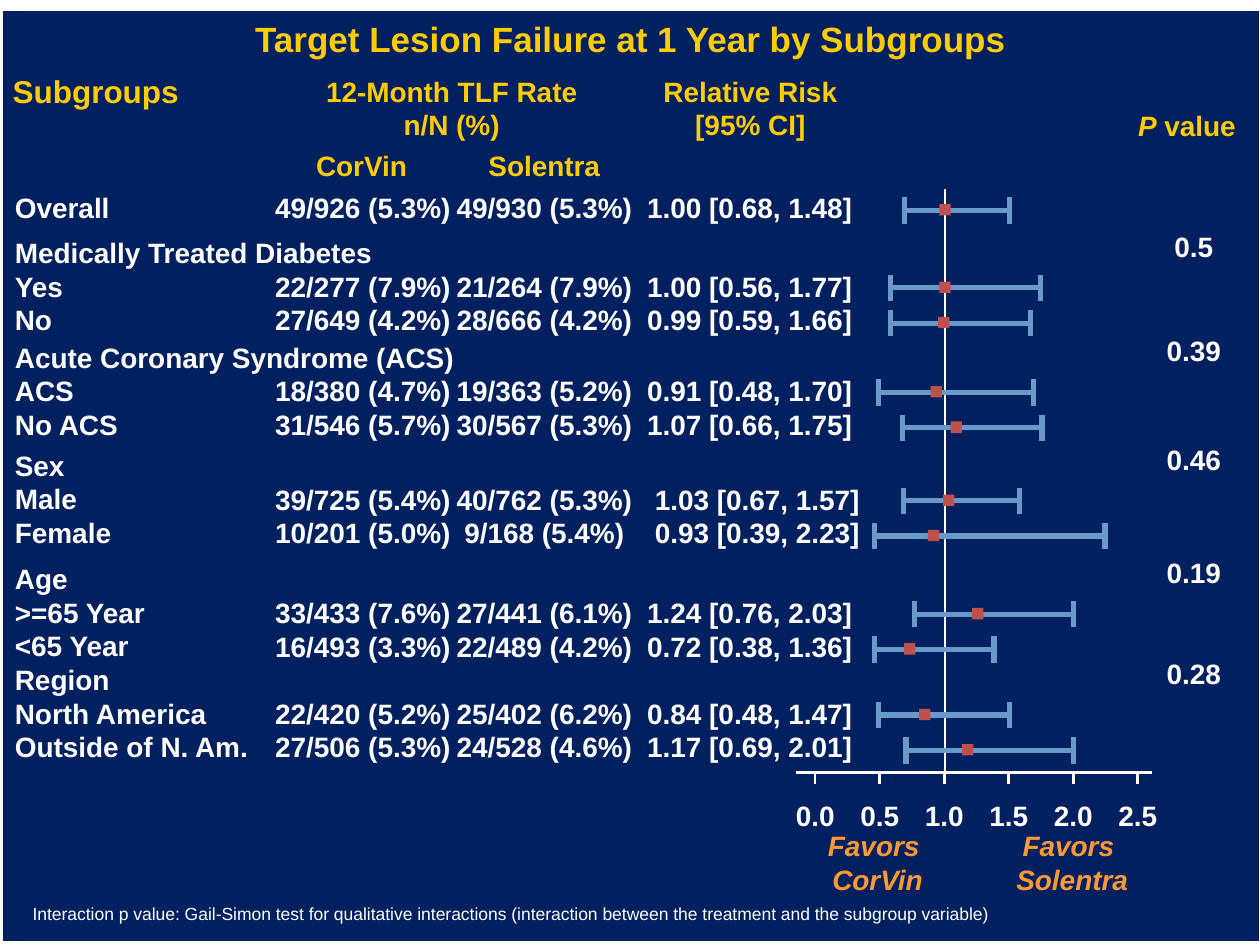
from dataclasses import dataclass

from lxml import etree
from pptx import Presentation
from pptx import util as u
from pptx.dml.color import RGBColor
from pptx.enum import shapes, text
from pptx.oxml import ns

COLUMNS, ROWS = 100, 75
ALIGN = {"left": text.PP_ALIGN.LEFT, "center": text.PP_ALIGN.CENTER}


@dataclass(frozen=True)
class Theme:
    """Colours, font and type sizes of the deck."""

    navy: str = "002060"
    white: str = "FFFFFF"
    gold: str = "FFCC00"
    orange: str = "FF9933"
    blue: str = "6999C8"
    red: str = "C0504D"
    font: str = "Arial"
    title: int = 20
    heading: int = 18
    body: int = 16
    note: int = 10


class ForestSlide:
    """Draws a forest plot slide on a grid of columns and rows."""

    def __init__(self, deck, theme):
        """Adds a blank page to the deck."""
        self.theme = theme
        self.column = deck.slide_width / COLUMNS
        self.row = deck.slide_height / ROWS
        self.page = deck.slides.add_slide(deck.slide_layouts[6])

    def place(self, left, top, width, height):
        """Turns grid units into slide lengths."""
        return [u.Emu(round(value * unit)) for value, unit in
                zip((left, top, width, height), (self.column, self.row) * 2)]

    def label(self, area, lines, color="white", align="center", wrap=False, **style):
        """Adds text; a line is a string or a list of (words, format) spans."""
        box = self.page.shapes.add_textbox(*self.place(*area))
        frame = box.text_frame
        frame.word_wrap = wrap
        frame.auto_size = text.MSO_AUTO_SIZE.SHAPE_TO_FIT_TEXT
        base = {"name": self.theme.font, "size": self.theme.body, "bold": True} | style
        for index, line in enumerate(lines):
            para = frame.add_paragraph() if index else frame.paragraphs[0]
            para.alignment = ALIGN[align]
            for words, extra in [(line, {})] if isinstance(line, str) else line:
                span = para.add_run()
                span.text = words
                values = base | extra
                values["size"] = u.Pt(values["size"])
                for name, value in values.items():
                    setattr(span.font, name, value)
                span.font.color.rgb = RGBColor.from_string(getattr(self.theme, color))

    def block(self, area, fill, line=None, target=None):
        """Adds a filled rectangle."""
        box = (target or self.page).shapes.add_shape(
            shapes.MSO_SHAPE.RECTANGLE, *self.place(*area))
        box.shadow.inherit = False
        box.fill.solid()
        box.fill.fore_color.rgb = RGBColor.from_string(getattr(self.theme, fill))
        if line:
            box.line.color.rgb = RGBColor.from_string(getattr(self.theme, line))
            box.line.width = u.Pt(0.75)
        else:
            box.line.fill.background()

    def rule(self, start, end, color="white", weight=1.5, target=None):
        """Adds a straight line between two grid points."""
        line = (target or self.page).shapes.add_connector(
            shapes.MSO_CONNECTOR.STRAIGHT, *self.place(*start, *end))
        line.line.color.rgb = RGBColor.from_string(getattr(self.theme, color))
        line.line.width = u.Pt(weight)
        etree.SubElement(line.element.spPr, ns.qn("a:effectLst"))

    def interval(self, y, low, middle, high):
        """Adds a confidence interval with end caps and a point estimate."""
        group = self.page.shapes.add_group_shape()
        pen = {"color": "blue", "weight": 3, "target": group}
        self.rule((low, y), (high, y), **pen)
        for x in (low, high):
            self.rule((x, y - 1.05), (x, y + 1.05), **pen)
        self.block((middle - 0.45, y - 0.5, 0.9, 0.9), "red", target=group)

    def axis(self, left, right, y, ticks, origin, step):
        """Adds the risk axis with its ticks and numbers."""
        self.rule((left, y), (right, y))
        for index, tick in enumerate(ticks):
            x = origin + index * step
            self.rule((x, y), (x, y + 0.9))
            self.label((x - 2.55, y + 1.6, 5.1, 3.7), [tick])

    def values(self, top, columns, shift=0):
        """Adds rates of both arms and the relative risk side by side."""
        places = ((20.8, 16), (35.2, 16), (50.3 + shift, 18.4))
        for (left, width), lines in zip(places, columns):
            self.label((left, top, width, 1 + 2.67 * len(lines)), lines)


DEVICES = ("CorVin", "Solentra")
OVERALL = [["49/926 (5.3%)"], ["49/930 (5.3%)"], ["1.00 [0.68, 1.48]"]]
SUBGROUPS = [
    (18.2, 30.6, ["Medically Treated Diabetes", "Yes", "No"], "0.5", 0,
     [["22/277 (7.9%)", "27/649 (4.2%)"], ["21/264 (7.9%)", "28/666 (4.2%)"],
      ["1.00 [0.56, 1.77]", "0.99 [0.59, 1.66]"]],
     [(70.7, 75, 82.6), (70.7, 74.9, 81.8)]),
    (26.5, 36.9, ["Acute Coronary Syndrome (ACS)", "ACS", "No ACS"], "0.39", 0,
     [["18/380 (4.7%)", "31/546 (5.7%)"], ["19/363 (5.2%)", "30/567 (5.3%)"],
      ["0.91 [0.48, 1.70]", "1.07 [0.66, 1.75]"]],
     [(69.7, 74.3, 82), (71.6, 75.9, 82.7)]),
    (35.1, 9.7, ["Sex", "Male", "Female"], "0.46", 0.6,
     [["39/725 (5.4%)", "10/201 (5.0%)"], ["40/762 (5.3%)", "9/168 (5.4%)"],
      ["1.03 [0.67, 1.57]", "0.93 [0.39, 2.23]"]],
     [(71.7, 75.3, 80.9), (69.4, 74.1, 87.7)]),
    (44.1, 12.5, ["Age", ">=65 Year", "<65 Year"], "0.19", 0,
     [["33/433 (7.6%)", "16/493 (3.3%)"], ["27/441 (6.1%)", "22/489 (4.2%)"],
      ["1.24 [0.76, 2.03]", "0.72 [0.38, 1.36]"]],
     [(72.6, 77.6, 85.2), (69.4, 72.2, 78.9)]),
    (52.1, 20.7, ["Region", "North America", "Outside of N. Am."], "0.28", 0,
     [["22/420 (5.2%)", "27/506 (5.3%)"], ["25/402 (6.2%)", "24/528 (4.6%)"],
      ["0.84 [0.48, 1.47]", "1.17 [0.69, 2.01]"]],
     [(69.7, 73.4, 80.1), (71.9, 76.8, 85.2)]),
]


def main():
    """Builds and saves the deck."""
    deck = Presentation()
    deck.slide_width, deck.slide_height = u.Inches(10), u.Inches(7.5)
    theme = Theme()
    slide = ForestSlide(deck, theme)
    slide.block((0.2, 0.8, 99.8, 73.9), "navy", line="white")

    slide.label((19.1, 0.9, 61.9, 4.3), ["Target Lesion Failure at 1 Year by Subgroups"],
                "gold", size=theme.title)
    slide.label((0, 5.2, 15.2, 4), ["Subgroups"], "gold", size=theme.heading)
    slide.label((23.1, 5.4, 25.5, 6.4), ["12-Month TLF Rate n/N (%)"], "gold", wrap=True)
    slide.label((51.6, 5.4, 15.9, 6.4), ["Relative Risk", "[95% CI]"], "gold")
    slide.label((89.3, 8.1, 9.8, 3.7), [[("P", {"italic": True}), (" value", {})]], "gold")

    places = ((23.2, 11, 64.2, 10.9), (37.5, 11.4, 79.4, 11.4))
    for device, (left, width, favor_left, favor_width) in zip(DEVICES, places):
        slide.label((left, 11.3, width, 3.7), [device], "gold")
        slide.label((favor_left, 65.3, favor_width, 6.4), ["Favors ", device],
                    "orange", italic=True)

    slide.axis(63.2, 91.4, 61.3, ("0.0", "0.5", "1.0", "1.5", "2.0", "2.5"), 64.7, 5.12)
    slide.rule((75, 15), (75, 61.3))

    slide.label((0.2, 14.6, 9.6, 3.7), ["Overall"], align="left")
    slide.values(14.6, OVERALL)
    slide.interval(16.7, 71.8, 75, 80.1)
    for top, width, names, p_value, shift, columns, intervals in SUBGROUPS:
        slide.label((0.2, top, width, 9), names, align="left")
        slide.values(top + 2.67, columns, shift)
        slide.label((91.6, top - 0.5, 6.3, 3.7), [p_value])
        for index, bounds in enumerate(intervals):
            slide.interval(top + 4.65 + index * 2.8, *bounds)

    slide.label((1.6, 71.2, 79.2, 2.7),
                ["Interaction p value: Gail-Simon test for qualitative interactions "
                 "(interaction between the treatment and the subgroup variable)"],
                align="left", size=theme.note, bold=False)
    deck.save("out.pptx")


if __name__ == "__main__":
    main()
